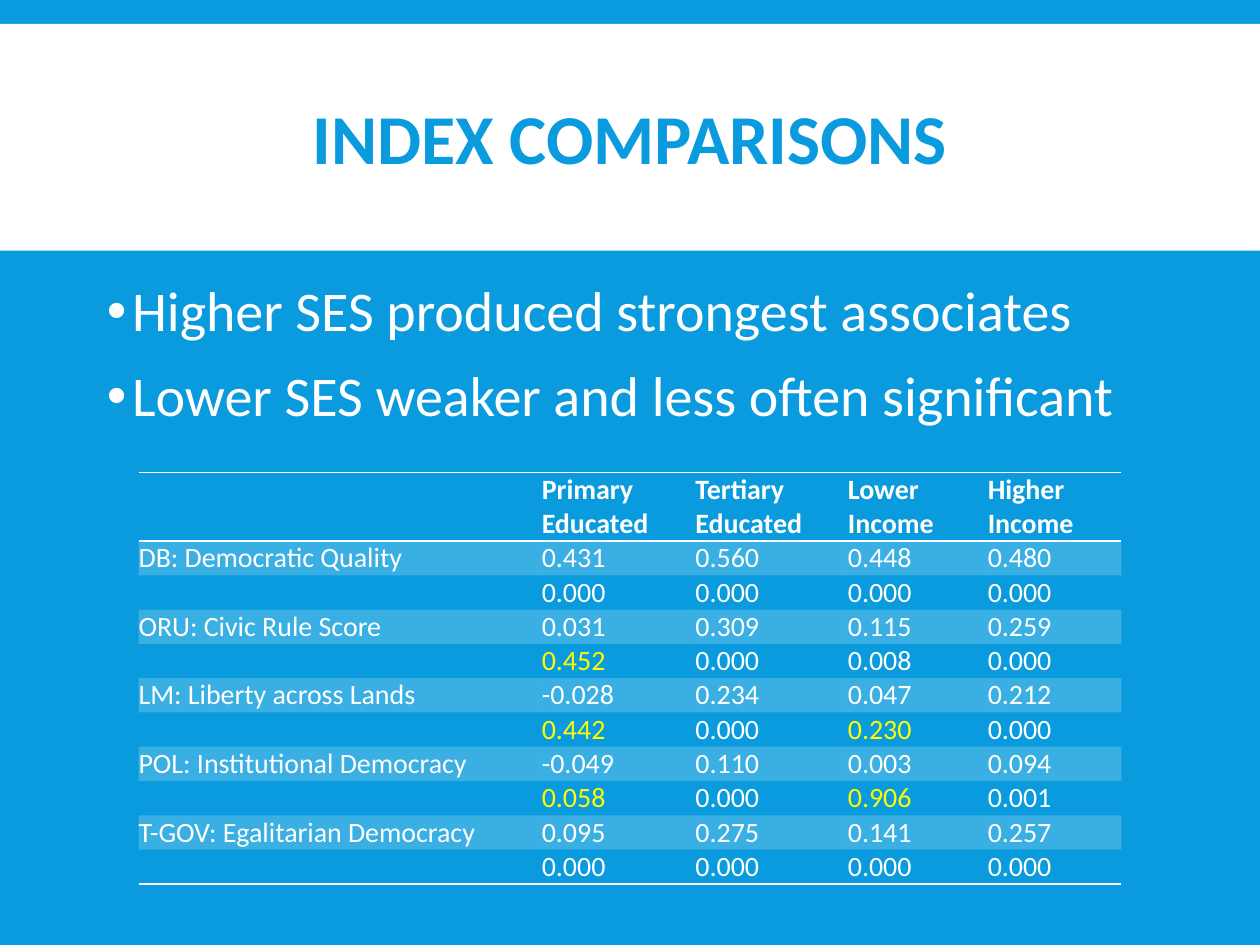
"""Build the index comparisons slide with its bullets and score table."""
from dataclasses import dataclass
from typing import Any

from lxml import etree
from pptx import Presentation
from pptx import util as u
from pptx.dml.color import RGBColor
from pptx.enum import shapes, text
from pptx.oxml.ns import qn

HUES = {"blue": "099BDD", "white": "FFFFFF", "mark": "FFFF00"}
FONT = "Calibri"
SIZE = 16
PLAIN = "{2D5ABB26-0587-4C30-8999-92F81FD0307C}"
COLS = (230.4, 87.84, 87.12, 79.92, 76.32)
HEADS = ("", "Primary \vEducated", "Tertiary \vEducated",
         "Lower \vIncome", "Higher \vIncome")
BULLETS = ("Higher SES produced strongest associates",
           "Lower SES weaker and less often significant")
LIMIT = 0.05


@dataclass(frozen=True)
class Score:
    name: str
    links: tuple[str, ...]
    odds: tuple[str, ...]


SCORES = (
    Score("DB: Democratic Quality", ("0.431", "0.560", "0.448", "0.480"),
          ("0.000", "0.000", "0.000", "0.000")),
    Score("ORU: Civic Rule Score", ("0.031", "0.309", "0.115", "0.259"),
          ("0.452", "0.000", "0.008", "0.000")),
    Score("LM: Liberty across Lands", ("-0.028", "0.234", "0.047", "0.212"),
          ("0.442", "0.000", "0.230", "0.000")),
    Score("POL: Institutional Democracy", ("-0.049", "0.110", "0.003", "0.094"),
          ("0.058", "0.000", "0.906", "0.001")),
    Score("T-GOV: Egalitarian Democracy", ("0.095", "0.275", "0.141", "0.257"),
          ("0.000", "0.000", "0.000", "0.000")),
)


def rgb(hue: str) -> RGBColor:
    return RGBColor.from_string(HUES[hue])


def style(para: Any, size: float, hue: str, bold: bool = False) -> None:
    for run in para.runs:
        run.font.name = FONT
        run.font.size = u.Pt(size)
        run.font.bold = bold
        run.font.color.rgb = rgb(hue)


def node(base: Any, tag: str, **attrs: str) -> Any:
    return etree.SubElement(base, qn(tag), attrs)


def box(slide: Any, left: float, top: float, wide: float, high: float,
        words: str) -> Any:
    frame = slide.shapes.add_textbox(
        u.Pt(left), u.Pt(top), u.Pt(wide), u.Pt(high)).text_frame
    frame.word_wrap = True
    frame.text = words
    return frame


def band(slide: Any) -> None:
    shape = slide.shapes.add_shape(
        shapes.MSO_SHAPE.RECTANGLE, 0, u.Pt(13.68), u.Pt(720), u.Pt(129.6))
    shape.shadow.inherit = False
    shape.fill.solid()
    shape.fill.fore_color.rgb = rgb("white")
    shape.line.fill.background()


def title(slide: Any) -> None:
    frame = box(slide, 54, 22.32, 612, 118.8, "INDEX COMPARISONS")
    frame.vertical_anchor = text.MSO_ANCHOR.MIDDLE
    para = frame.paragraphs[0]
    para.alignment = text.PP_ALIGN.CENTER
    para.line_spacing = 0.85
    style(para, 40, "blue", True)


def points(slide: Any) -> None:
    frame = box(slide, 54, 158.4, 612, 111.6, "\n".join(BULLETS))
    for para in frame.paragraphs:
        para.line_spacing = 0.9
        para.space_before = u.Pt(12)
        para.space_after = u.Pt(2)
        style(para, 32, "white")
        props = para._p.get_or_add_pPr()
        props.set("marL", str(u.Pt(14.4)))
        props.set("indent", str(u.Pt(-14.4)))
        node(node(props, "a:buClr"), "a:srgbClr", val=HUES["white"])
        node(props, "a:buFont", typeface="Arial")
        node(props, "a:buChar", char="•")


def edge(cell: Any, *tags: str) -> None:
    props = cell._tc.get_or_add_tcPr()
    for spot, tag in enumerate(tags):
        line = node(props, tag, w=str(u.Pt(1)))
        node(node(line, "a:solidFill"), "a:srgbClr", val=HUES["white"])
        props.insert(spot, line)


def paint(cell: Any, tint: bool) -> None:
    if not tint:
        cell.fill.background()
        return
    cell.fill.solid()
    cell.fill.fore_color.rgb = rgb("white")
    for tone in cell._tc.tcPr.iter(qn("a:srgbClr")):
        node(tone, "a:alpha", val="20000")


def write(cell: Any, words: str, hue: str, head: bool) -> None:
    cell.margin_left = cell.margin_right = 0
    cell.margin_top = cell.margin_bottom = 0
    anchor = text.MSO_ANCHOR
    cell.vertical_anchor = anchor.MIDDLE if head else anchor.BOTTOM
    cell.text_frame.text = words
    para = cell.text_frame.paragraphs[0]
    style(para, SIZE, hue, head)
    for stop in para._p.iter(qn("a:br")):
        node(stop, "a:rPr", sz=str(SIZE * 100))
    if not words:
        node(para._p, "a:endParaRPr", sz=str(SIZE * 100))


def grid(slide: Any) -> None:
    rows = [HEADS]
    for score in SCORES:
        rows += [(score.name, *score.links), ("", *score.odds)]
    last = len(rows) - 1
    table = slide.shapes.add_table(
        len(rows), len(COLS), u.Pt(79.2), u.Pt(270),
        u.Pt(sum(COLS)), u.Pt(19.6 * (len(rows) + 1))).table
    table.first_row = table.horz_banding = False
    table._tbl.tblPr.find(qn("a:tableStyleId")).text = PLAIN
    for col, wide in zip(table.columns, COLS):
        col.width = u.Pt(wide)
    for i, row in enumerate(rows):
        head = i == 0
        odds = not head and i % 2 == 0
        table.rows[i].height = u.Pt(39.2 if head else 19.6)
        for j, words in enumerate(row):
            cell = table.cell(i, j)
            weak = odds and j > 0 and float(words) > LIMIT
            write(cell, words, "mark" if weak else "white", head)
            paint(cell, i % 2 == 1)
            if head:
                edge(cell, "a:lnT", "a:lnB")
            elif i == last:
                edge(cell, "a:lnB")


def main() -> None:
    deck = Presentation()
    deck.slide_width, deck.slide_height = u.Pt(720), u.Pt(540)
    slide = deck.slides.add_slide(deck.slide_layouts[6])
    slide.background.fill.solid()
    slide.background.fill.fore_color.rgb = rgb("blue")
    band(slide)
    title(slide)
    points(slide)
    grid(slide)
    deck.save("out.pptx")


if __name__ == "__main__":
    main()
